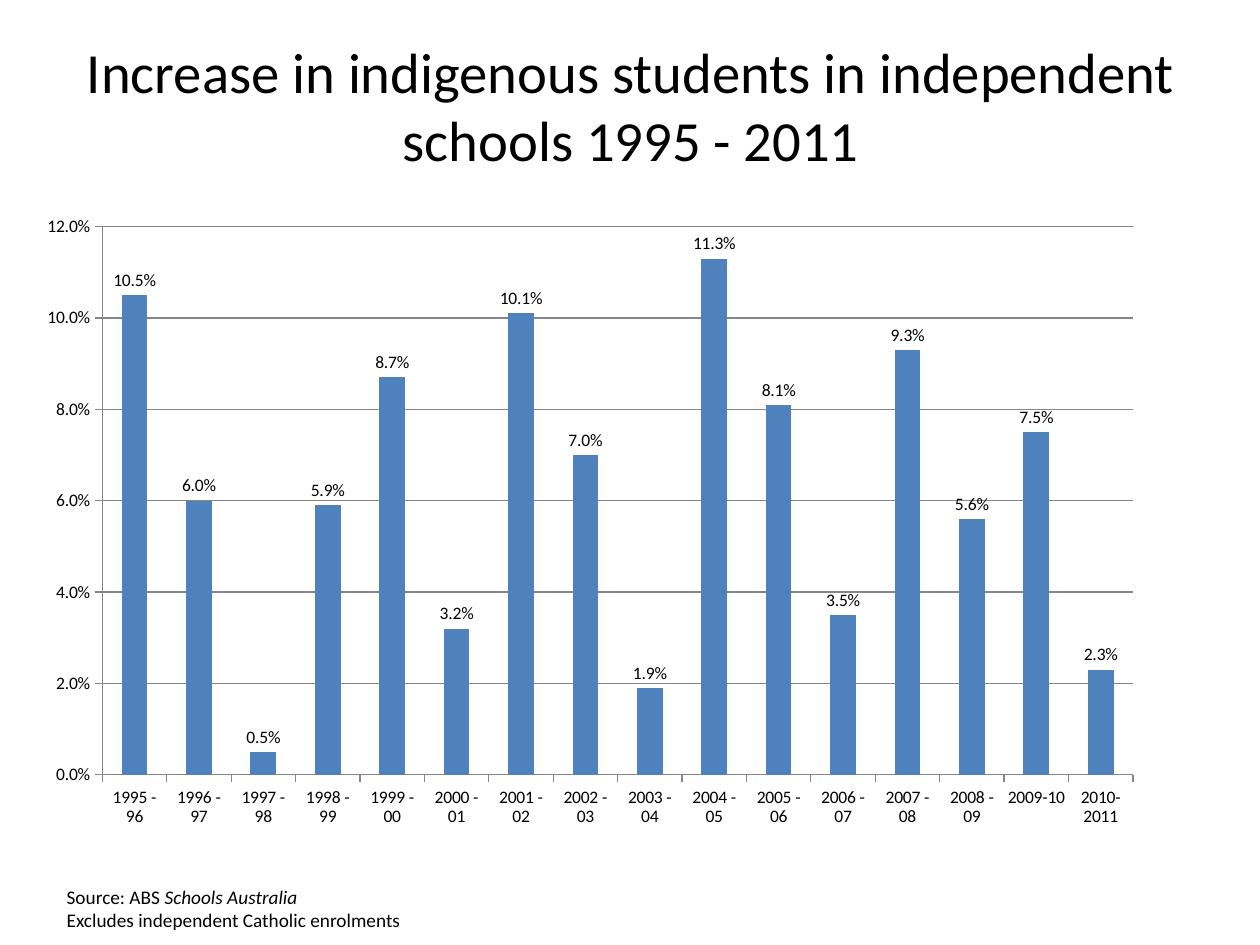
from pptx import Presentation
from pptx.chart.data import CategoryChartData
from pptx.dml.color import RGBColor
from pptx.enum.chart import XL_CHART_TYPE, XL_LABEL_POSITION, XL_TICK_MARK
from pptx.enum.text import MSO_ANCHOR, PP_ALIGN
from pptx.oxml import parse_xml
from pptx.oxml.ns import nsdecls, qn
from pptx.util import Pt

BLACK = RGBColor(0x00, 0x00, 0x00)
BLUE = RGBColor(0x4F, 0x81, 0xBD)
GRAY = RGBColor(0x86, 0x86, 0x86)
FONT = "Calibri"
PERCENT = "0.0%"

INCREASES = {
    "1995 - 96": 0.105, "1996 - 97": 0.06, "1997 - 98": 0.005, "1998 - 99": 0.059,
    "1999 - 00": 0.087, "2000 - 01": 0.032, "2001 - 02": 0.101, "2002 - 03": 0.07,
    "2003 - 04": 0.019, "2004 - 05": 0.113, "2005 - 06": 0.081, "2006 - 07": 0.035,
    "2007 - 08": 0.093, "2008 - 09": 0.056, "2009-10": 0.075, "2010-2011": 0.023,
}


class PageBuilder:
    def __init__(self, page):
        self.page = page

    def style(self, font, size):
        font.name = FONT
        font.size = Pt(size)
        font.color.rgb = BLACK

    def text(self, left, top, width, height, paragraphs, size,
             align=PP_ALIGN.LEFT, anchor=MSO_ANCHOR.TOP):
        box = self.page.shapes.add_textbox(Pt(left), Pt(top), Pt(width), Pt(height))
        frame = box.text_frame
        frame.word_wrap = True
        frame.vertical_anchor = anchor
        for index, spans in enumerate(paragraphs):
            para = frame.add_paragraph() if index else frame.paragraphs[0]
            para.alignment = align
            for words, italic in spans:
                span = para.add_run()
                span.text = words
                self.style(span.font, size)
                span.font.italic = italic

    def column_chart(self, left, top, width, height, values):
        data = CategoryChartData(number_format=PERCENT)
        data.categories = list(values)
        data.add_series("Series 1", list(values.values()))
        chart = self.page.shapes.add_chart(
            XL_CHART_TYPE.COLUMN_CLUSTERED, Pt(left), Pt(top), Pt(width), Pt(height), data
        ).chart
        chart.has_legend = False
        chart.has_title = False
        self.style(chart.font, 10)
        self.place_plot(chart, x=0.068, y=0.036, w=0.911, h=0.863)

        plot = chart.plots[0]
        plot.gap_width = 150
        plot.vary_by_categories = False
        series = plot.series[0]
        series.format.fill.solid()
        series.format.fill.fore_color.rgb = BLUE
        labels = series.data_labels
        labels.show_value = True
        labels.number_format = PERCENT
        labels.number_format_is_linked = False
        labels.position = XL_LABEL_POSITION.OUTSIDE_END
        self.style(labels.font, 10)

        value_axis = chart.value_axis
        value_axis.minimum_scale = 0
        value_axis.maximum_scale = 0.12
        value_axis.major_unit = 0.02
        value_axis.tick_labels.number_format = PERCENT
        value_axis.tick_labels.number_format_is_linked = False
        value_axis.has_major_gridlines = True
        for axis in (chart.category_axis, value_axis):
            axis.major_tick_mark = XL_TICK_MARK.OUTSIDE
            self.line(axis.format.line)
        self.line(value_axis.major_gridlines.format.line)

    def line(self, line):
        line.color.rgb = GRAY
        line.width = Pt(0.75)

    def place_plot(self, chart, **fractions):
        area = chart.element.find(".//" + qn("c:plotArea"))
        for layout in area.findall(qn("c:layout")):
            area.remove(layout)
        sizes = "".join(f'<c:{key} val="{value}"/>' for key, value in fractions.items())
        area.insert(0, parse_xml(
            f'<c:layout {nsdecls("c")}><c:manualLayout><c:layoutTarget val="inner"/>'
            f'<c:xMode val="edge"/><c:yMode val="edge"/>{sizes}</c:manualLayout></c:layout>'
        ))


def main():
    deck = Presentation()
    deck.slide_width = Pt(720)
    deck.slide_height = Pt(540)
    builder = PageBuilder(deck.slides.add_slide(deck.slide_layouts[6]))
    builder.text(
        36.5, 15, 648, 90,
        [[("Increase in indigenous students in independent schools 1995 - 2011", False)]],
        32.4, PP_ALIGN.CENTER, MSO_ANCHOR.MIDDLE,
    )
    builder.text(
        31, 502.5, 272, 34,
        [[("Source: ABS ", False), ("Schools Australia", True)],
         [("Excludes independent Catholic enrolments", False)]],
        11,
    )
    builder.column_chart(14.5, 116.5, 646.5, 363, INCREASES)
    deck.save("out.pptx")


if __name__ == "__main__":
    main()
